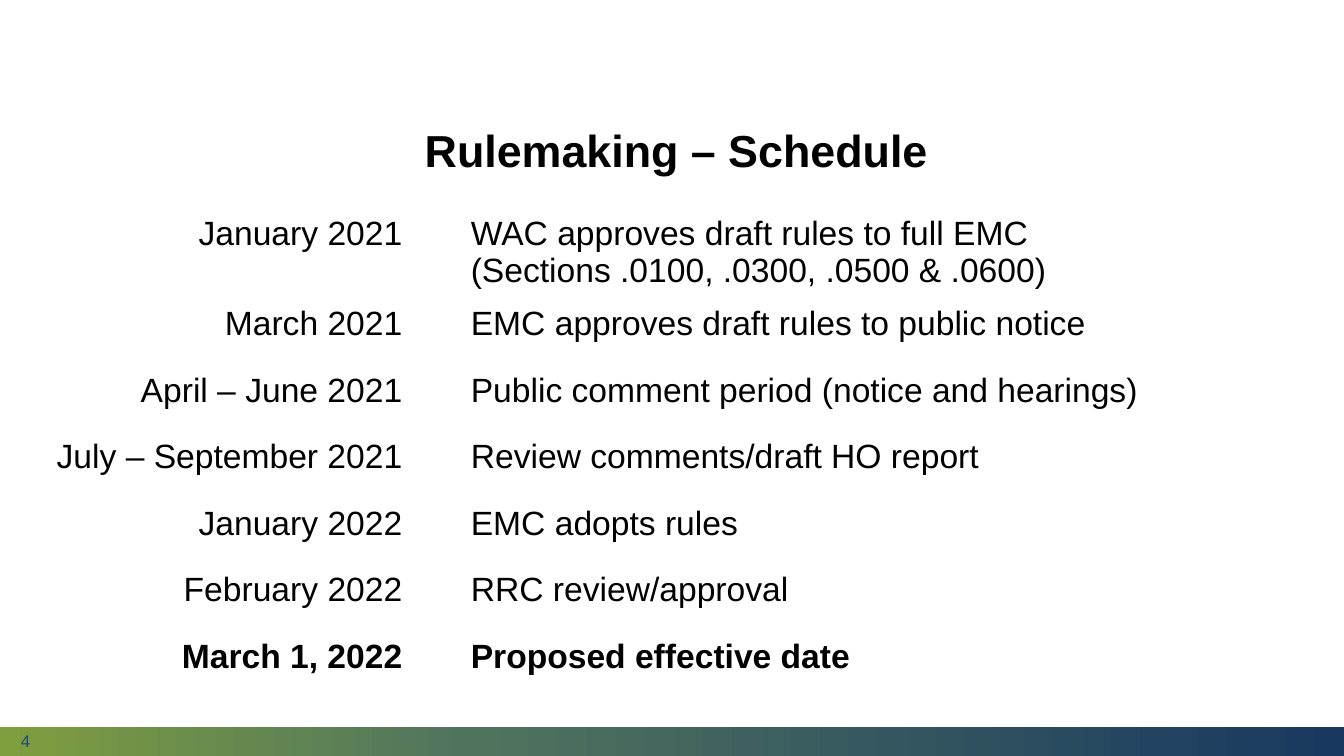
from copy import deepcopy

from pptx import Presentation
from pptx.dml.color import RGBColor
from pptx.enum.shapes import MSO_SHAPE
from pptx.enum.text import MSO_ANCHOR, PP_ALIGN
from pptx.oxml.ns import qn
from pptx.util import Inches, Pt

BLACK = RGBColor(0x00, 0x00, 0x00)
NUMBER_BLUE = RGBColor(0x1F, 0x49, 0x7D)
OLIVE = RGBColor(0x7F, 0x9E, 0x3F)
SAGE = RGBColor(0x4F, 0x74, 0x5E)
NAVY = RGBColor(0x18, 0x38, 0x60)

FOOTER_STOPS = [(0, OLIVE), (0.35, SAGE), (1, NAVY)]
COLUMN_WIDTHS = [3.66, 0.48, 8.26]
ROW_HEIGHT = 0.66
SCHEDULE = [
    ("January 2021", "WAC approves draft rules to full EMC\n(Sections .0100, .0300, .0500 & .0600)"),
    ("March 2021", "EMC approves draft rules to public notice"),
    ("April – June 2021", "Public comment period (notice and hearings)"),
    ("July – September 2021", "Review comments/draft HO report"),
    ("January 2022", "EMC adopts rules"),
    ("February 2022", "RRC review/approval"),
    ("March 1, 2022", "Proposed effective date"),
]


class SlideBuilder:
    font_name = "Arial"

    def __init__(self, slide):
        self.slide = slide

    def style_text(self, frame, size, color=BLACK, bold=False, align=PP_ALIGN.LEFT):
        for para in frame.paragraphs:
            para.alignment = align
            for span in para.runs:
                span.font.name = self.font_name
                span.font.size = Pt(size)
                span.font.bold = bold
                span.font.color.rgb = color

    def gradient_bar(self, left, top, width, height, stops):
        bar = self.slide.shapes.add_shape(
            MSO_SHAPE.RECTANGLE, Inches(left), Inches(top), Inches(width), Inches(height))
        bar.shadow.inherit = False
        bar.line.fill.background()
        bar.fill.gradient()
        bar.fill.gradient_angle = 0
        stop_list = next(bar._element.iter(qn("a:gsLst")))
        for _ in range(len(stops) - len(stop_list)):
            stop_list.append(deepcopy(stop_list[0]))
        for stop, (position, color) in zip(bar.fill.gradient_stops, stops):
            stop.position = position
            stop.color.rgb = color

    def text(self, left, top, width, height, words, size, line_spacing=1.0, **style):
        box = self.slide.shapes.add_textbox(
            Inches(left), Inches(top), Inches(width), Inches(height))
        frame = box.text_frame
        frame.word_wrap = True
        frame.vertical_anchor = MSO_ANCHOR.MIDDLE
        frame.text = words
        frame.paragraphs[0].line_spacing = line_spacing
        self.style_text(frame, size, **style)

    def schedule_table(self, left, top, rows, size):
        table = self.slide.shapes.add_table(
            len(rows), len(COLUMN_WIDTHS), Inches(left), Inches(top),
            Inches(sum(COLUMN_WIDTHS)), Inches(ROW_HEIGHT * len(rows))).table
        table.first_row = False
        table.horz_banding = False
        for column, width in zip(table.columns, COLUMN_WIDTHS):
            column.width = Inches(width)
        for row, (date, event) in zip(table.rows, rows):
            row.height = Inches(ROW_HEIGHT)
            bold = (date, event) == rows[-1]
            aligns = (PP_ALIGN.RIGHT, PP_ALIGN.LEFT, PP_ALIGN.LEFT)
            for cell, words, align in zip(row.cells, (date, "", event), aligns):
                cell.fill.background()
                cell.text_frame.text = words
                self.style_text(cell.text_frame, size, bold=bold, align=align)


def main():
    deck = Presentation()
    deck.slide_width = Inches(13.33)
    deck.slide_height = Inches(7.5)
    page = SlideBuilder(deck.slides.add_slide(deck.slide_layouts[6]))
    page.gradient_bar(0, 7.21, 13.33, 0.29, FOOTER_STOPS)
    page.text(0.11, 7.27, 3, 0.15, "4", 12, color=NUMBER_BLUE)
    page.text(0.96, 1.16, 11.5, 0.71, "Rulemaking – Schedule", 32,
              line_spacing=0.9, bold=True, align=PP_ALIGN.CENTER)
    page.schedule_table(0.43, 2.08, SCHEDULE, 24)
    deck.save("out.pptx")


if __name__ == "__main__":
    main()
